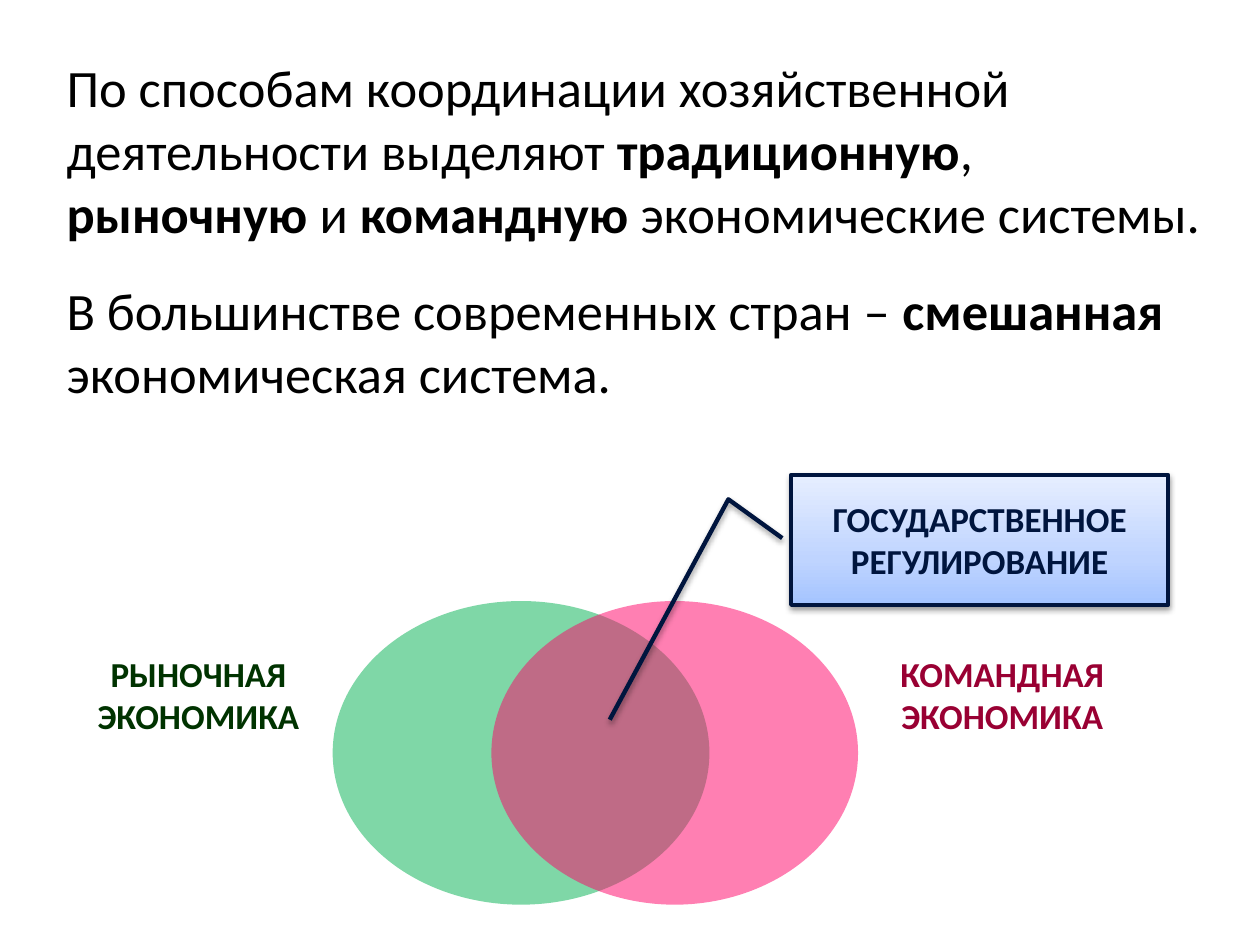
from copy import deepcopy

from lxml.etree import SubElement
from pptx import Presentation
from pptx.dml.color import RGBColor
from pptx.enum.shapes import MSO_SHAPE
from pptx.enum.text import MSO_ANCHOR, PP_ALIGN
from pptx.oxml.ns import qn
from pptx.util import Inches, Pt

FONT = "Calibri"
BLACK = RGBColor(0x00, 0x00, 0x00)
GREEN = RGBColor(0x00, 0xB0, 0x50)
PINK = RGBColor(0xFF, 0x00, 0x66)
DARK_GREEN = RGBColor(0x00, 0x33, 0x00)
DARK_RED = RGBColor(0x99, 0x00, 0x33)
NAVY = RGBColor(0x00, 0x15, 0x3E)
GRADIENT = [
    (0, RGBColor(0xA4, 0xC4, 0xFF)),
    (35, RGBColor(0xBF, 0xD4, 0xFF)),
    (100, RGBColor(0xE6, 0xEE, 0xFF)),
]

INTRO = [
    [("По способам координации хозяйственной деятельности выделяют ", False),
     ("традиционную", True), (", ", False), ("рыночную", True), (" и ", False),
     ("командную", True), (" экономические системы.", False)],
    [("В большинстве современных стран – ", False), ("смешанная", True),
     (" экономическая система.", False)],
]
ELLIPSES = [((2.64, 4.77, 2.99, 2.41), GREEN), ((3.9, 4.77, 2.91, 2.41), PINK)]
LABELS = [
    ((0.67, 5.13, 1.81, 0.77), ["РЫНОЧНАЯ ЭКОНОМИКА"], DARK_GREEN),
    ((6.97, 5.13, 1.97, 0.77), ["КОМАНДНАЯ", "ЭКОНОМИКА"], DARK_RED),
]
CALLOUT_TEXT = ["ГОСУДАРСТВЕННОЕ РЕГУЛИРОВАНИЕ"]
CALLOUT_POINTS = [0.487, -0.024, 0.188, -0.167, 1.886, -0.482]


def box(values):
    return [Inches(v) for v in values]


def write(tf, paragraphs, size, color, align, gap=0):
    tf.word_wrap = True
    for i, runs in enumerate(paragraphs):
        p = tf.paragraphs[0] if i == 0 else tf.add_paragraph()
        p.alignment = align
        if i and gap:
            p.space_before = Pt(gap)
        for text, bold in runs:
            r = p.add_run()
            r.text = text
            r.font.name = FONT
            r.font.size = Pt(size)
            r.font.bold = bold
            r.font.color.rgb = color


def write_label(tf, lines, color):
    write(tf, [[(line, True)] for line in lines], 20, color, PP_ALIGN.CENTER)


def set_alpha(color_element, percent):
    SubElement(color_element, qn("a:alpha"), val=str(percent * 1000))


def fill_gradient(sp):
    sp.fill.gradient()
    sp.fill.gradient_angle = 90
    stops = sp._element.spPr.find(qn("a:gradFill")).find(qn("a:gsLst"))
    stops.insert(1, deepcopy(stops[0]))
    for stop, (position, color) in zip(sp.fill.gradient_stops, GRADIENT):
        stop.position = position / 100
        stop.color.rgb = color


def add_shadow(sp):
    sp.shadow.inherit = False
    effects = sp._element.spPr.find(qn("a:effectLst"))
    shadow = SubElement(effects, qn("a:outerShdw"), blurRad=str(Pt(3.1)),
                        dist=str(Pt(1.6)), dir="5400000", rotWithShape="0")
    set_alpha(SubElement(shadow, qn("a:srgbClr"), val="000000"), 38)


prs = Presentation()
prs.slide_width, prs.slide_height = Inches(10), Inches(7.5)
s = prs.slides.add_slide(prs.slide_layouts[6])

tb = s.shapes.add_textbox(*box((0.43, 0.39, 9.29, 2.89)))
write(tb.text_frame, INTRO, 30, BLACK, PP_ALIGN.LEFT, gap=19.5)

venn = s.shapes.add_group_shape()
for place, color in ELLIPSES:
    sp = venn.shapes.add_shape(MSO_SHAPE.OVAL, *box(place))
    sp.shadow.inherit = False
    sp.fill.solid()
    sp.fill.fore_color.rgb = color
    set_alpha(sp._element.spPr.find(qn("a:solidFill"))[0], 50)
    sp.line.fill.background()

for place, lines, color in LABELS:
    tb = s.shapes.add_textbox(*box(place))
    write_label(tb.text_frame, lines, color)

callout = s.shapes.add_shape(MSO_SHAPE.LINE_CALLOUT_2, *box((6.28, 3.77, 2.99, 1.03)))
for i, value in enumerate(CALLOUT_POINTS):
    callout.adjustments[i] = value
fill_gradient(callout)
callout.line.color.rgb = NAVY
callout.line.width = Pt(2.5)
add_shadow(callout)
callout.text_frame.vertical_anchor = MSO_ANCHOR.MIDDLE
write_label(callout.text_frame, CALLOUT_TEXT, NAVY)

prs.save("out.pptx")
